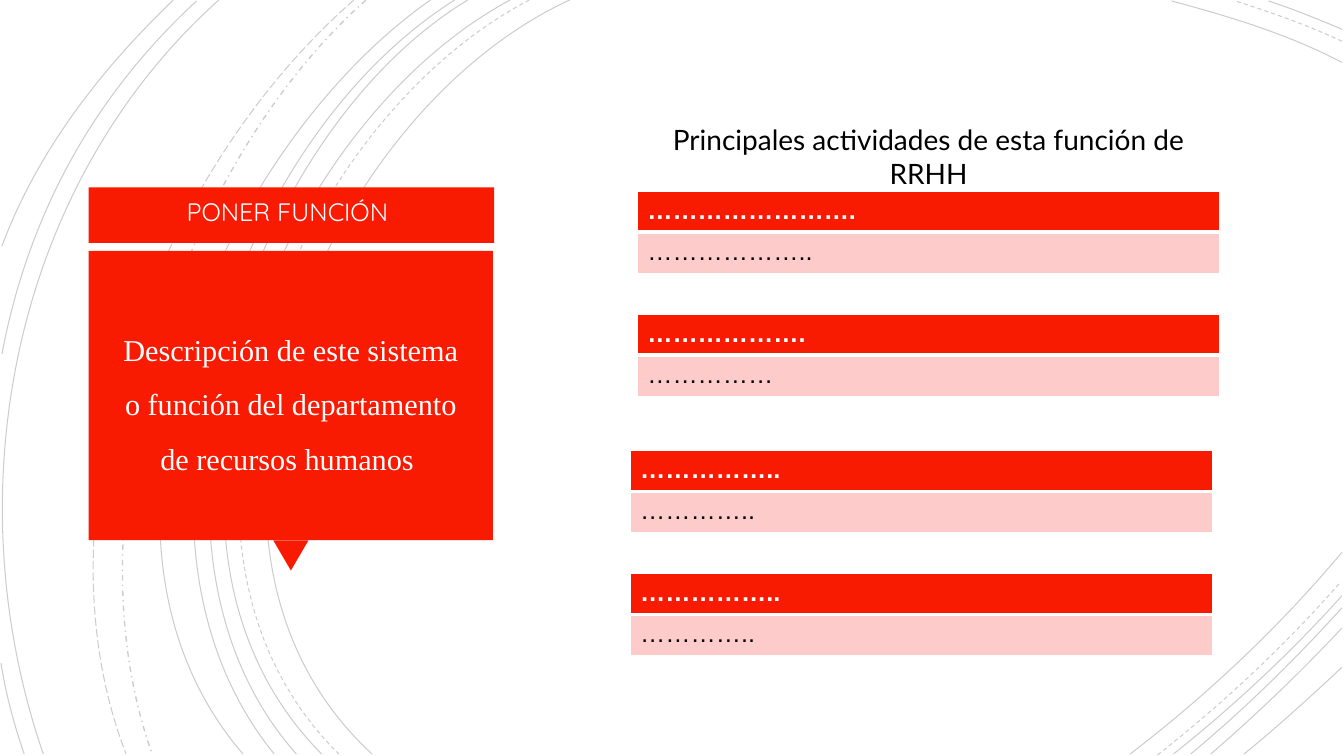
from dataclasses import dataclass

from lxml import etree
from pptx import Presentation
from pptx.dml.color import RGBColor
from pptx.enum import dml, shapes, text
from pptx.oxml import ns
from pptx.util import Inches, Pt

RED, PINK, WHITE, BLACK = "F81B02", "FCCBCA", "FFFFFF", "000000"
SOLID, DASH = dml.MSO_LINE.SOLID, dml.MSO_LINE.DASH
DASH_DOT, LONG_DASH = dml.MSO_LINE.DASH_DOT, dml.MSO_LINE.LONG_DASH


@dataclass
class Arc:
    """Bezier curve: start, two controls and end, in inches."""
    points: list[tuple[float, float]]
    dash: dml.MSO_LINE = SOLID
    width: float = 0.75


@dataclass
class Activity:
    left: float
    top: float
    heading: str
    detail: str


ARCS = [
    # Bundle sweeping down the left half
    Arc([(5.65, 0), (3.15, 1.15), (1.43, 5.4), (3.69, 7.48)]),
    Arc([(5.25, 0), (2.85, 1.25), (1.23, 5.37), (3.36, 7.48)], DASH),
    Arc([(5.06, 0), (2.7, 1.27), (1.1, 5.37), (3.19, 7.48)]),
    Arc([(4.64, 0), (2.44, 1.33), (1.1, 5.41), (2.94, 7.48)]),
    Arc([(4.51, 0), (2.31, 1.38), (0.97, 5.33), (2.72, 7.48)]),
    Arc([(4.27, 0), (2.17, 1.47), (0.53, 5.29), (2.41, 7.48)]),
    Arc([(3.63, 0), (1.76, 1.66), (0.65, 5.09), (1.51, 7.48)], DASH_DOT, 1),
    Arc([(3.51, 0), (1.57, 1.69), (0.29, 4.99), (1.25, 7.48)], LONG_DASH),
    Arc([(2.17, 0), (0.11, 1.85), (-0.46, 4.9), (0.43, 7.48)]),
    Arc([(1.95, 0.01), (0.92, 0.96), (0.28, 2.14), (0.02, 3.51)]),
    Arc([(0.01, 6.58), (0.06, 6.89), (0.14, 7.19), (0.24, 7.48)]),
    Arc([(1.72, 0), (1, 0.69), (0.37, 1.5), (0.02, 2.44)]),
    # Top right corner
    Arc([(13.31, 0.62), (12.78, 0.34), (12.18, 0.16), (11.62, 0.01)]),
    Arc([(13.31, 0.41), (12.97, 0.25), (12.6, 0.12), (12.25, 0.01)], DASH),
    Arc([(13.31, 0.29), (13.07, 0.19), (12.83, 0.09), (12.58, 0.01)]),
    # Bottom right corner
    Arc([(11.21, 7.48), (11.97, 6.9), (12.69, 6.22), (13.31, 5.48)]),
    Arc([(11.48, 7.49), (12.13, 6.98), (12.75, 6.4), (13.3, 5.77)], DASH),
    Arc([(11.64, 7.48), (12.23, 7.01), (12.8, 6.48), (13.31, 5.91)]),
    Arc([(11.81, 7.48), (12.34, 7.04), (12.84, 6.55), (13.31, 6.03)]),
    Arc([(12.01, 7.48), (12.46, 7.09), (12.9, 6.67), (13.31, 6.23)]),
    Arc([(12.34, 7.48), (12.67, 7.21), (12.99, 6.92), (13.31, 6.62)]),
]

ACTIVITIES = [
    Activity(6.32, 1.9, "…………………….", "……………….."),
    Activity(6.32, 3.12, "……………….", "……………"),
    Activity(6.25, 4.47, "……………..", "………….."),
    Activity(6.25, 5.69, "……………..", "………….."),
]


def paint(color_format, color: str) -> None:
    color_format.rgb = RGBColor.from_string(color)


def fill(target, color: str) -> None:
    target.fill.solid()
    paint(target.fill.fore_color, color)


def write(frame, words: str, *, font: str, size: float, color: str,
          bold: bool = False, align=None, spacing: float | None = None) -> None:
    paragraph = frame.paragraphs[0]
    paragraph.alignment = align
    paragraph.line_spacing = spacing
    run = paragraph.add_run()
    run.text = words
    run.font.name, run.font.size, run.font.bold = font, Pt(size), bold
    paint(run.font.color, color)


def draw_arc(slide, arc: Arc) -> None:
    start, *rest = [(Inches(x), Inches(y)) for x, y in arc.points]
    builder = slide.shapes.build_freeform(*start)
    curve = builder.add_line_segments(rest, close=False).convert_to_shape()
    curve.shadow.inherit = False
    curve.fill.background()
    curve.line.width = Pt(arc.width)
    curve.line.dash_style = arc.dash
    paint(curve.line.color, BLACK)
    line_color = curve.line._ln.find(".//" + ns.qn("a:srgbClr"))
    etree.SubElement(line_color, ns.qn("a:alpha"), val="20000")
    # Turn the three straight segments into one cubic curve
    outline = curve._element.find(".//" + ns.qn("a:path"))
    bezier = etree.SubElement(outline, ns.qn("a:cubicBezTo"))
    for segment in outline.findall(ns.qn("a:lnTo")):
        bezier.append(segment[0])
        outline.remove(segment)


def draw_block(slide, kind, left: float, top: float, width: float,
               height: float, rotation: float = 0) -> None:
    block = slide.shapes.add_shape(
        kind, Inches(left), Inches(top), Inches(width), Inches(height))
    block.shadow.inherit = False
    block.rotation = rotation
    fill(block, RED)
    block.line.fill.background()


def draw_label(slide, left: float, top: float, width: float, height: float,
               words: str, **look) -> None:
    label = slide.shapes.add_textbox(
        Inches(left), Inches(top), Inches(width), Inches(height))
    frame = label.text_frame
    frame.word_wrap = True
    frame.auto_size = text.MSO_AUTO_SIZE.SHAPE_TO_FIT_TEXT
    write(frame, words, align=text.PP_ALIGN.CENTER, **look)


def set_borders(cell, bottom: float) -> None:
    properties = cell._tc.get_or_add_tcPr()
    widths = {"lnL": 1, "lnR": 1, "lnT": 1, "lnB": bottom}
    for position, (side, width) in enumerate(widths.items()):
        border = etree.Element(ns.qn("a:" + side), w=str(Pt(width)))
        solid = etree.SubElement(border, ns.qn("a:solidFill"))
        etree.SubElement(solid, ns.qn("a:srgbClr"), val=WHITE)
        properties.insert(position, border)


def draw_activity(slide, activity: Activity) -> None:
    table = slide.shapes.add_table(
        2, 1, Inches(activity.left), Inches(activity.top),
        Inches(5.78), Inches(0.81)).table
    rows = [(activity.heading, RED, WHITE, True, 3),
            (activity.detail, PINK, BLACK, False, 1)]
    for index, (words, back, color, bold, bottom) in enumerate(rows):
        cell = table.cell(index, 0)
        fill(cell, back)
        set_borders(cell, bottom)
        write(cell.text_frame, words, font="Arial", size=18, color=color,
              bold=bold)


def place_title(slide, words: str) -> None:
    title = slide.shapes.title
    title.left, title.top = Inches(0.97), Inches(2.57)
    title.width, title.height = Inches(3.83), Inches(2.69)
    frame = title.text_frame
    frame.word_wrap = True
    frame.auto_size = text.MSO_AUTO_SIZE.NONE
    frame.vertical_anchor = text.MSO_ANCHOR.MIDDLE
    frame.margin_left = frame.margin_right = Inches(0.25)
    frame.margin_top = frame.margin_bottom = Inches(0.25)
    write(frame, words, font="Times New Roman", size=21.6, color="FFFEFF",
          align=text.PP_ALIGN.CENTER, spacing=1.5)
    # Bring the title in front of the red panel
    slide.shapes._spTree.append(title._element)


def main() -> None:
    deck = Presentation()
    deck.slide_width, deck.slide_height = Inches(13.33), Inches(7.5)
    slide = deck.slides.add_slide(deck.slide_layouts[5])
    fill(slide.background, WHITE)

    # Background curves
    for arc in ARCS:
        draw_arc(slide, arc)

    # Red panel with its pointer
    draw_block(slide, shapes.MSO_SHAPE.RECTANGLE, 0.88, 1.86, 4.02, 0.55)
    draw_block(slide, shapes.MSO_SHAPE.ISOSCELES_TRIANGLE,
               2.71, 5.36, 0.35, 0.3, rotation=180)
    draw_block(slide, shapes.MSO_SHAPE.RECTANGLE, 0.88, 2.49, 4.01, 2.87)
    place_title(slide, "Descripción de este sistema o función del "
                       "departamento de recursos humanos ")
    draw_label(slide, 0.87, 1.9, 4.03, 0.4, "PONER FUNCIÓN ",
               font="Quicksand", size=18, color=WHITE)

    # Activities
    draw_label(slide, 6.32, 1.17, 5.78, 0.44,
               "Principales actividades de esta función de RRHH",
               font="Lato", size=20, color=BLACK)
    for activity in ACTIVITIES:
        draw_activity(slide, activity)

    deck.save("out.pptx")


if __name__ == "__main__":
    main()
